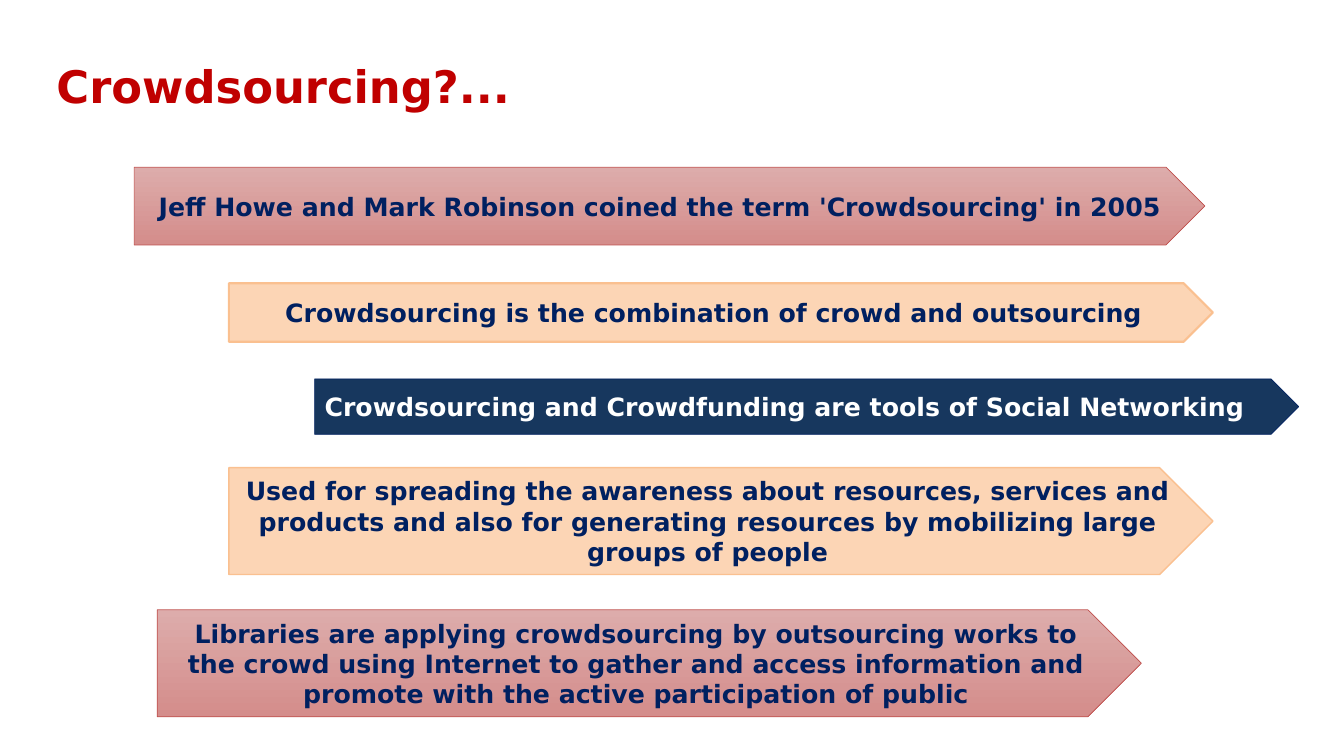
from dataclasses import dataclass

from pptx import Presentation
from pptx.dml.color import RGBColor
from pptx.enum.shapes import MSO_SHAPE
from pptx.enum.text import MSO_ANCHOR, MSO_AUTO_SIZE, PP_ALIGN
from pptx.util import Inches, Pt

ARROW = MSO_SHAPE.PENTAGON
MIDDLE = MSO_ANCHOR.MIDDLE
FIXED = MSO_AUTO_SIZE.NONE
LEFT, CENTER = PP_ALIGN.LEFT, PP_ALIGN.CENTER
WIDE, HIGH = Inches(13.33), Inches(7.5)


@dataclass(frozen=True)
class Theme:
    font: str = "DejaVu Sans"
    head: int = 32
    body: int = 18
    red: str = "C00000"
    navy: str = "002060"
    white: str = "FFFFFF"


@dataclass(frozen=True)
class Look:
    fill: tuple[str, ...]  # one colour, or top and bottom of a gradient
    edge: str
    ink: str


@dataclass(frozen=True)
class Box:
    """Left, top, width and height in percent of the slide."""
    left: float
    top: float
    width: float
    height: float


@dataclass(frozen=True)
class Band:
    text: str
    box: Box
    look: Look
    line: float
    align: PP_ALIGN = CENTER


THEME = Theme()
ROSE = Look(("DDACAB", "D48D8B"), "C0504D", THEME.navy)
PEACH = Look(("FCD5B5",), "FAC090", THEME.navy)
DARK = Look(("17375E",), THEME.navy, THEME.white)

SPAN = 73.22  # usual band width
TALL = 14.13  # three lines of text
INDENT = 17.03

HEAD = Box(3.45, 2.13, 86.27, 19.33)
BANDS = [
    Band("Jeff Howe and Mark Robinson coined the term 'Crowdsourcing' in 2005",
         Box(9.98, 22.13, 79.67, 10.27), ROSE, 0.5),
    Band("Crowdsourcing is the combination of crowd and outsourcing",
         Box(INDENT, 37.47, SPAN, 7.73), PEACH, 1.5),
    Band("Crowdsourcing and Crowdfunding are tools of Social Networking",
         Box(23.41, 50.13, SPAN, 7.33), DARK, 0.5, LEFT),
    Band("Used for spreading the awareness about resources, services and "
         "products and also for generating resources by mobilizing large "
         "groups of people",
         Box(INDENT, 61.87, SPAN, TALL), PEACH, 1),
    Band("Libraries are applying crowdsourcing by outsourcing works to the "
         "crowd using Internet to gather and access information and promote "
         "with the active participation of public",
         Box(11.7, 80.67, SPAN, TALL), ROSE, 0.5),
]


def rgb(code: str) -> RGBColor:
    return RGBColor.from_string(code)


def place(box: Box) -> tuple[int, int, int, int]:
    return (int(WIDE * box.left / 100), int(HIGH * box.top / 100),
            int(WIDE * box.width / 100), int(HIGH * box.height / 100))


def write(shape, text: str, size: int, ink: str, align: PP_ALIGN) -> None:
    frame = shape.text_frame
    frame.text = text
    frame.word_wrap = True
    frame.auto_size = FIXED
    frame.vertical_anchor = MIDDLE
    para = frame.paragraphs[0]
    para.alignment = align
    font = para.runs[0].font
    font.name, font.size, font.bold = THEME.font, Pt(size), True
    font.color.rgb = rgb(ink)


def paint(shape, look: Look, line: float) -> None:
    fill = shape.fill
    if len(look.fill) > 1:
        fill.gradient()
        fill.gradient_angle = 270
        for stop, code in zip(fill.gradient_stops, look.fill):
            stop.color.rgb = rgb(code)
    else:
        fill.solid()
        fill.fore_color.rgb = rgb(look.fill[0])
    shape.line.color.rgb = rgb(look.edge)
    shape.line.width = Pt(line)
    shape.shadow.inherit = False


def draw(slide, band: Band) -> None:
    shape = slide.shapes.add_shape(ARROW, *place(band.box))
    paint(shape, band.look, band.line)
    write(shape, band.text, THEME.body, band.look.ink, band.align)


def main() -> None:
    deck = Presentation()
    deck.slide_width, deck.slide_height = WIDE, HIGH
    slide = deck.slides.add_slide(deck.slide_layouts[5])

    # Title
    title = slide.shapes.title
    title.left, title.top, title.width, title.height = place(HEAD)
    write(title, "Crowdsourcing?...", THEME.head, THEME.red, LEFT)
    title.text_frame.paragraphs[0].line_spacing = 0.9

    # Arrow bands
    for band in BANDS:
        draw(slide, band)

    deck.save("out.pptx")


if __name__ == "__main__":
    main()
